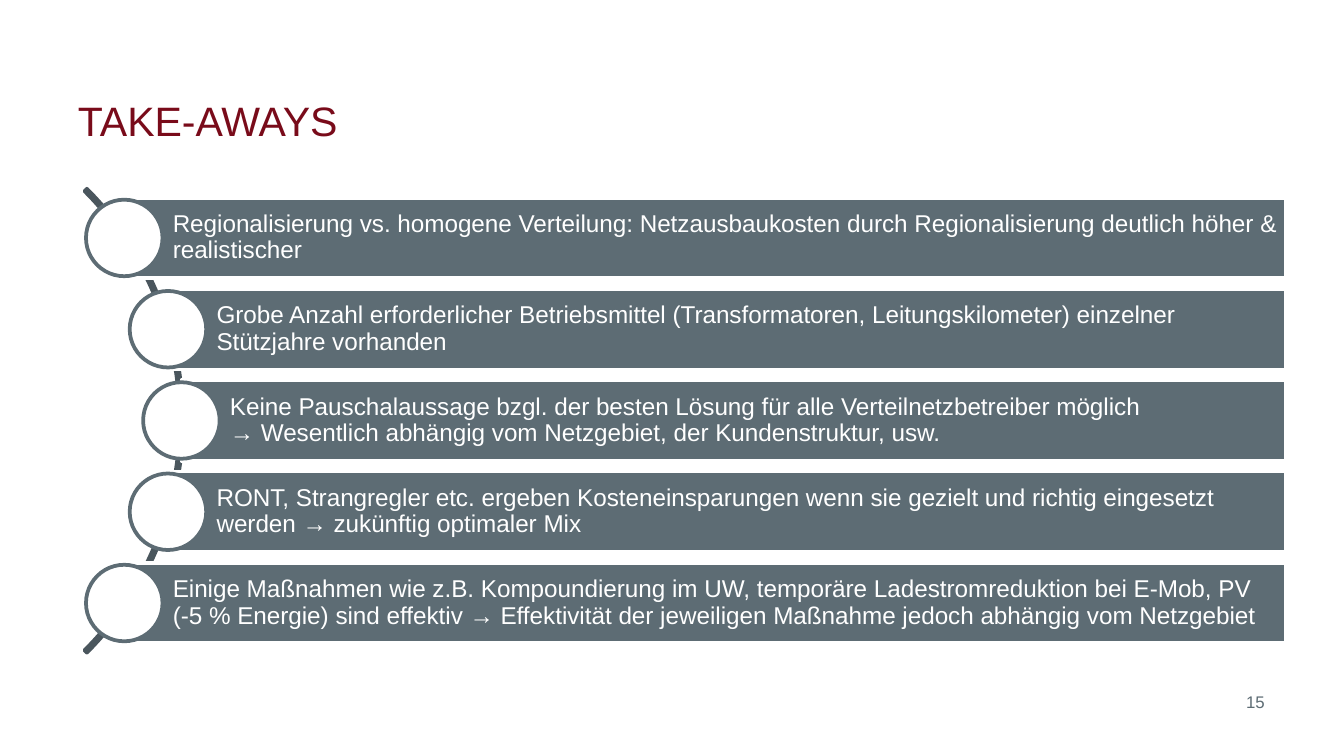
from pptx import Presentation
from pptx.dml.color import RGBColor
from pptx.enum import shapes, text
from pptx.util import Pt

# Content: left edge of each bar, and its lines of text
TITLE = "TAKE-AWAYS"
PAGE_NUMBER = "15"
TAKEAWAYS = [
    (66.6, ["Regionalisierung vs. homogene Verteilung: Netzausbaukosten durch "
            "Regionalisierung deutlich höher & realistischer"]),
    (90, ["Grobe Anzahl erforderlicher Betriebsmittel (Transformatoren, "
          "Leitungskilometer) einzelner Stützjahre vorhanden"]),
    (97.2, ["Keine Pauschalaussage bzgl. der besten Lösung für alle "
            "Verteilnetzbetreiber möglich",
            "→ Wesentlich abhängig vom Netzgebiet, der Kundenstruktur, usw."]),
    (90, ["RONT, Strangregler etc. ergeben Kosteneinsparungen wenn sie gezielt "
          "und richtig eingesetzt werden → zukünftig optimaler Mix"]),
    (66.6, ["Einige Maßnahmen wie z.B. Kompoundierung im UW, temporäre "
            "Ladestromreduktion bei E-Mob, PV",
            "(-5 % Energie) sind effektiv → Effektivität der jeweiligen "
            "Maßnahme jedoch abhängig vom Netzgebiet"]),
]

FONT = "Arial"
WHITE, SLATE, DARK_SLATE, RED = "FFFFFF", "5D6C74", "4A565D", "790B1A"
BAR_TOP, BAR_PITCH, BAR_HEIGHT, BAR_RIGHT = 105.9, 48.9, 43.2, 688.7
CIRCLE_SIZE = 41

presentation = Presentation()
presentation.slide_width, presentation.slide_height = Pt(720), Pt(405)
slide = presentation.slides.add_slide(presentation.slide_layouts[6])


def color(value):
    return RGBColor.from_string(value)


def add_shape(kind, left, top, width, height, fill, line):
    shape = slide.shapes.add_shape(kind, Pt(left), Pt(top), Pt(width), Pt(height))
    shape.shadow.inherit = False
    if fill:
        shape.fill.solid()
        shape.fill.fore_color.rgb = color(fill)
    else:
        shape.fill.background()
    shape.line.color.rgb = color(line)
    shape.line.width = Pt(2)
    return shape


def write(shape, lines, size, font_color, anchor, align, insets=(0, 0, 0, 0)):
    frame = shape.text_frame
    frame.word_wrap = True
    frame.vertical_anchor = anchor
    (frame.margin_left, frame.margin_top,
     frame.margin_right, frame.margin_bottom) = map(Pt, insets)
    paragraph = frame.paragraphs[0]
    paragraph.alignment = align
    for index, line in enumerate(lines):
        if index:
            paragraph.add_line_break()
        run = paragraph.add_run()
        run.text = line
        run.font.name, run.font.size = FONT, Pt(size)
        run.font.color.rgb = color(font_color)
    return paragraph


def add_text(left, top, width, height, *style):
    box = slide.shapes.add_textbox(Pt(left), Pt(top), Pt(width), Pt(height))
    write(box, *style)


# Arc behind the bars: only its right-hand quarter is drawn
arc = add_shape(shapes.MSO_SHAPE.BLOCK_ARC, -253.4, 49.7, 351.4, 351.4,
                None, DARK_SLATE)
for index, value in enumerate((189, 27, 0.005)):
    arc.adjustments[index] = value

# Bars, each with a circle centred on its left edge
for row, (left, lines) in enumerate(TAKEAWAYS):
    top = BAR_TOP + row * BAR_PITCH
    bar = add_shape(shapes.MSO_SHAPE.RECTANGLE, left, top, BAR_RIGHT - left,
                    BAR_HEIGHT, SLATE, WHITE)
    paragraph = write(bar, lines, 13, WHITE, text.MSO_ANCHOR.MIDDLE,
                      text.PP_ALIGN.LEFT, (26, 2.6, 2.6, 2.6))
    paragraph.line_spacing = 0.9
    add_shape(shapes.MSO_SHAPE.OVAL, left - CIRCLE_SIZE / 2,
              top + (BAR_HEIGHT - CIRCLE_SIZE) / 2, CIRCLE_SIZE, CIRCLE_SIZE,
              WHITE, SLATE)

# Title and page number
add_text(41.8, 20.9, 493.9, 56.9, [TITLE], 22, RED,
         text.MSO_ANCHOR.BOTTOM, text.PP_ALIGN.LEFT)
add_text(534.2, 370.8, 143.3, 13.7, [PAGE_NUMBER], 9, SLATE,
         text.MSO_ANCHOR.TOP, text.PP_ALIGN.RIGHT)

presentation.save("out.pptx")
